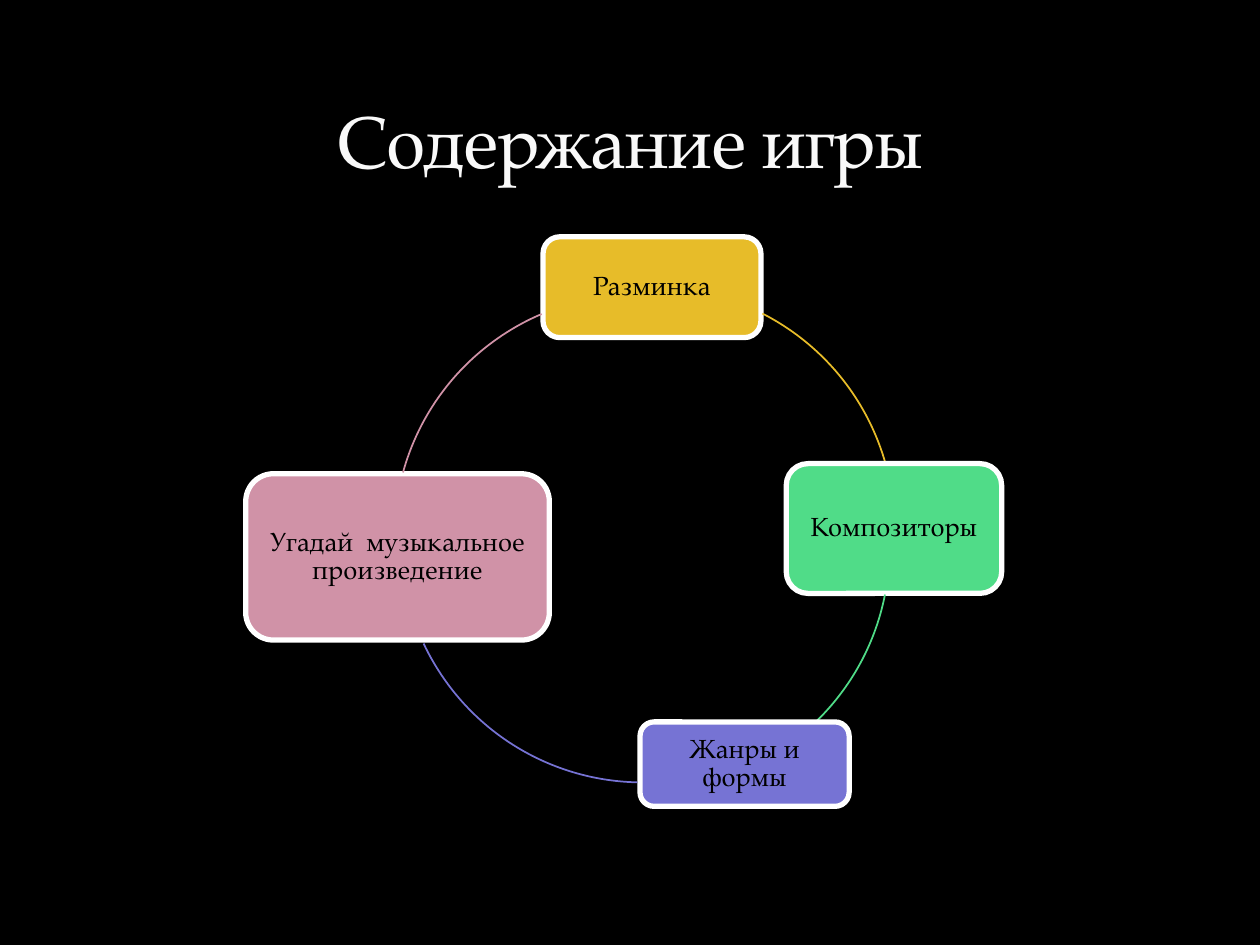
from dataclasses import dataclass

from pptx import Presentation
from pptx import util as u
from pptx.dml.color import RGBColor
from pptx.enum import shapes, text


@dataclass(frozen=True)
class Theme:
    """Colours, font and type sizes of the slide."""
    back: str = "000000"
    head: str = "F9F9F9"
    edge: str = "FFFFFF"
    ink: str = "000000"
    gold: str = "E7BC29"
    green: str = "50DC88"
    blue: str = "7673D4"
    rose: str = "D092A7"
    font: str = "TeX Gyre Pagella"
    big: int = 42
    small: int = 15


T = Theme()
RING = 3.84
STEPS = [
    ("Разминка", T.gold, (4.31, 1.88, 1.73, 0.8), (3.26, 2.28), (297, 343.9)),
    ("Композиторы", T.green, (6.24, 3.68, 1.71, 1.03), (3.22, 2.43), (11.1, 45.6)),
    ("Жанры и формы", T.blue, (5.08, 5.73, 1.66, 0.67), (3.18, 2.37), (91.2, 154.8)),
    ("Угадай  музыкальное произведение", T.rose, (1.95, 3.76, 2.41, 1.32),
     (3.13, 2.34), (195.4, 247)),
]


def rgb(code):
    """Turn a hex code into a colour."""
    return RGBColor.from_string(code)


def write(frame, words, size, color):
    """Put one centred run in a text frame and return it."""
    frame.word_wrap = True
    para = frame.paragraphs[0]
    para.alignment = text.PP_ALIGN.CENTER
    run = para.add_run()
    run.text = words
    run.font.name = T.font
    run.font.size = u.Pt(size)
    run.font.color.rgb = rgb(color)
    return run


def title(slide, box, words):
    """Place the heading at the foot of its box."""
    frame = slide.shapes.add_textbox(*map(u.Inches, box)).text_frame
    frame.vertical_anchor = text.MSO_ANCHOR.BOTTOM
    run = write(frame, words, T.big, T.head)
    run.font._element.set("spc", "-100")


def shape(slide, kind, box, line, width):
    """Add a plain outlined shape."""
    item = slide.shapes.add_shape(kind, *map(u.Inches, box))
    item.shadow.inherit = False
    item.line.color.rgb = rgb(line)
    item.line.width = u.Pt(width)
    return item


def node(slide, box, words, color):
    """Place one labelled step of the cycle."""
    item = shape(slide, shapes.MSO_SHAPE.ROUNDED_RECTANGLE, box, T.edge, 3)
    item.fill.solid()
    item.fill.fore_color.rgb = rgb(color)
    frame = item.text_frame
    frame.margin_left = frame.margin_right = u.Inches(0.06)
    frame.margin_top = frame.margin_bottom = u.Inches(0.06)
    frame.vertical_anchor = text.MSO_ANCHOR.MIDDLE
    write(frame, words, T.small, T.ink)
    frame.paragraphs[0].line_spacing = 0.9


def arc(slide, box, span, color):
    """Draw a clockwise arc between two angles in degrees."""
    item = shape(slide, shapes.MSO_SHAPE.ARC, box, color, 1)
    item.fill.background()
    for i, angle in enumerate(span):
        item.adjustments[i] = angle * 0.6


def cycle(slide, box, steps):
    """Place the steps and the arcs that lead on from them."""
    left, top = box[:2]
    for words, color, (x, y, w, h), (cx, cy), span in steps:
        node(slide, (left + x, top + y, w, h), words, color)
        arc(slide, (left + cx, top + cy, RING, RING), span, color)


def main():
    """Build and save the slide."""
    deck = Presentation()
    deck.slide_width, deck.slide_height = u.Inches(10), u.Inches(7.5)
    slide = deck.slides.add_slide(deck.slide_layouts[6])
    slide.background.fill.solid()
    slide.background.fill.fore_color.rgb = rgb(T.back)
    cycle(slide, (0, 0, 10, 7.5), STEPS)
    title(slide, (0.5, 0.17, 9, 1.33), "Содержание игры")
    deck.save("out.pptx")


if __name__ == "__main__":
    main()
